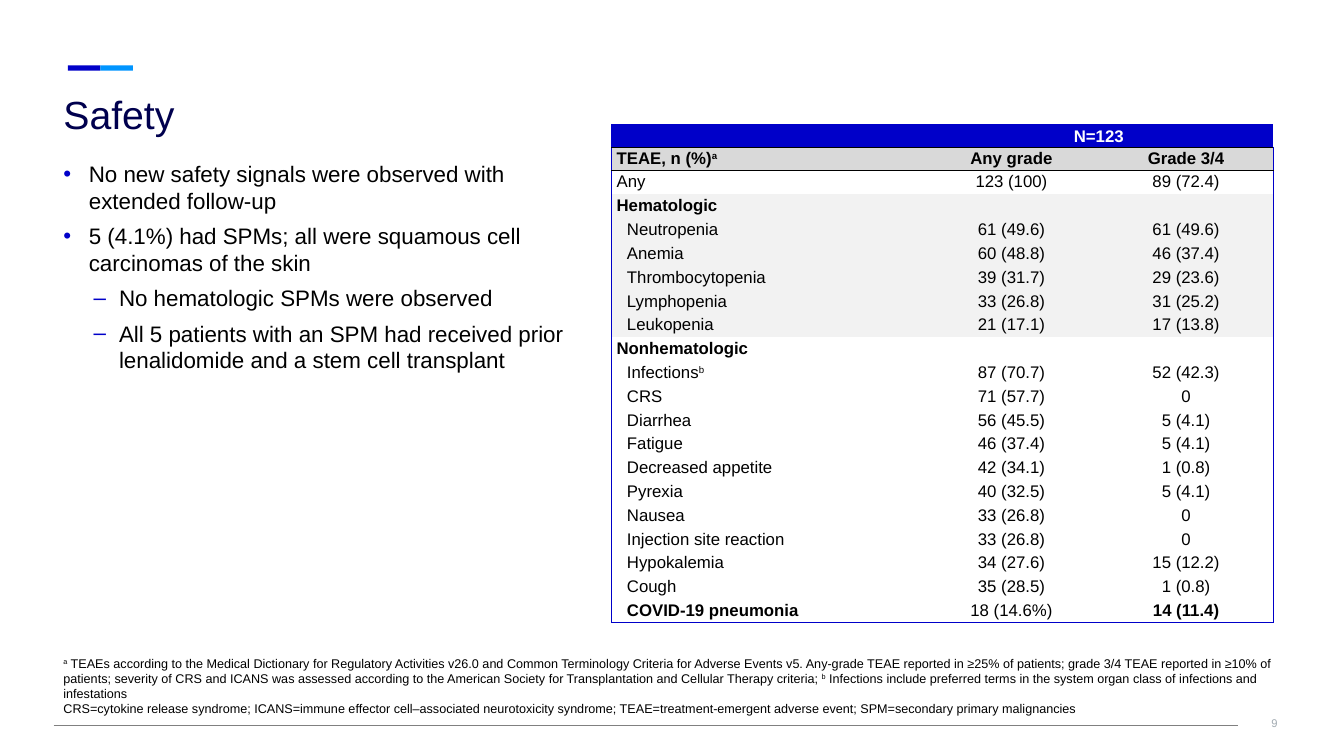
from lxml.etree import SubElement
from pptx import Presentation
from pptx.dml.color import RGBColor
from pptx.enum.shapes import MSO_CONNECTOR, MSO_SHAPE
from pptx.enum.text import MSO_ANCHOR, PP_ALIGN
from pptx.oxml.ns import qn
from pptx.util import Cm, Pt

# Content
TITLE = "Safety"
PAGE_NUMBER = "9"
BULLETS = [  # level, text
    (0, "No new safety signals were observed with extended follow-up"),
    (0, "5 (4.1%) had SPMs; all were squamous cell carcinomas of the skin"),
    (1, "No hematologic SPMs were observed"),
    (1, "All 5 patients with an SPM had received prior lenalidomide and a stem cell transplant"),
]
# Text between carets is superscript
FOOTNOTES = [
    "^a^ TEAEs according to the Medical Dictionary for Regulatory Activities v26.0 and Common "
    "Terminology Criteria for Adverse Events v5. Any-grade TEAE reported in ≥25% of patients; "
    "grade 3/4 TEAE reported in ≥10% of patients; severity of CRS and ICANS was assessed "
    "according to the American Society for Transplantation and Cellular Therapy criteria; "
    "^b^ Infections include preferred terms in the system organ class of infections and infestations",
    "CRS=cytokine release syndrome; ICANS=immune effector cell–associated neurotoxicity syndrome; "
    "TEAE=treatment-emergent adverse event; SPM=secondary primary malignancies",
]
EVENTS = [
    ("", "N=123", ""),
    ("TEAE, n (%)^a^", "Any grade", "Grade 3/4"),
    ("Any", "123 (100)", "89 (72.4)"),
    ("Hematologic", "", ""),
    ("Neutropenia", "61 (49.6)", "61 (49.6)"),
    ("Anemia", "60 (48.8)", "46 (37.4)"),
    ("Thrombocytopenia", "39 (31.7)", "29 (23.6)"),
    ("Lymphopenia", "33 (26.8)", "31 (25.2)"),
    ("Leukopenia", "21 (17.1)", "17 (13.8)"),
    ("Nonhematologic", "", ""),
    ("Infections^b^", "87 (70.7)", "52 (42.3)"),
    ("CRS", "71 (57.7)", "0"),
    ("Diarrhea", "56 (45.5)", "5 (4.1)"),
    ("Fatigue", "46 (37.4)", "5 (4.1)"),
    ("Decreased appetite", "42 (34.1)", "1 (0.8)"),
    ("Pyrexia", "40 (32.5)", "5 (4.1)"),
    ("Nausea", "33 (26.8)", "0"),
    ("Injection site reaction", "33 (26.8)", "0"),
    ("Hypokalemia", "34 (27.6)", "15 (12.2)"),
    ("Cough", "35 (28.5)", "1 (0.8)"),
    ("COVID-19 pneumonia", "18 (14.6%)", "14 (11.4)"),
]
HEADER_ROWS = 2
HEMATOLOGIC, NONHEMATOLOGIC = 3, 9
LAST_ROW, LAST_COLUMN = len(EVENTS) - 1, 2
BOLD_CELLS = {(HEMATOLOGIC, 0), (NONHEMATOLOGIC, 0), (LAST_ROW, 0), (LAST_ROW, 2)}

# Style
FONT = "Arial"
BLUE = RGBColor(0x00, 0x00, 0xC9)
SKY = RGBColor(0x00, 0x95, 0xFF)
NAVY = RGBColor(0x00, 0x00, 0x4E)
BLACK = RGBColor(0x00, 0x00, 0x00)
WHITE = RGBColor(0xFF, 0xFF, 0xFF)
HEADING_GRAY = RGBColor(0xD9, 0xD9, 0xD9)
BAND_GRAY = RGBColor(0xF2, 0xF2, 0xF2)
RULE_GRAY = RGBColor(0x80, 0x80, 0x80)
NUMBER_GRAY = RGBColor(0xA1, 0xAA, 0xB1)

# Layout in centimetres
LEFT = 1.35
COLUMN_WIDTHS = (7.87, 4.4, 4.4)
HEADER_HEIGHT, ROW_HEIGHT = 0.57, 0.6


def set_font(para, size, color, bold=False):
    font = para.font
    font.name, font.size, font.bold = FONT, Pt(size), bold
    font.color.rgb = color


def add_spans(para, text):
    for position, part in enumerate(text.split("^")):
        if part:
            span = para.add_run()
            span.text = part
            if position % 2:
                span._r.get_or_add_rPr().set("baseline", "30000")


def add_text_box(page, left, top, width, height, anchor=MSO_ANCHOR.TOP, inset=None):
    box = page.shapes.add_textbox(Cm(left), Cm(top), Cm(width), Cm(height))
    frame = box.text_frame
    frame.word_wrap = True
    frame.vertical_anchor = anchor
    if inset:
        frame.margin_left = frame.margin_right = Cm(inset)
        frame.margin_top = frame.margin_bottom = Cm(inset)
    return frame


def add_bullet(para, level):
    properties = para._p.get_or_add_pPr()
    properties.set("marL", str(Cm(1.4 if level else 0.64)))
    properties.set("indent", str(-Cm(0.64)))
    color = SubElement(properties, qn("a:buClr"))
    SubElement(color, qn("a:srgbClr"), val=str(BLUE))
    SubElement(properties, qn("a:buFont"), typeface=FONT)
    SubElement(properties, qn("a:buChar"), char="–" if level else "•")


def set_borders(cell, colors):
    """Colors in the order left, right, top, bottom; None hides the side."""
    properties = cell._tc.get_or_add_tcPr()
    for position, (side, color) in enumerate(zip("LRTB", colors)):
        line = SubElement(properties, qn(f"a:ln{side}"), w=str(Pt(1)))
        properties.insert(position, line)
        if color is None:
            SubElement(line, qn("a:noFill"))
        else:
            fill = SubElement(line, qn("a:solidFill"))
            SubElement(fill, qn("a:srgbClr"), val=str(color))


def row_fill(row):
    if row < HEADER_ROWS:
        return (BLUE, HEADING_GRAY)[row]
    return BAND_GRAY if HEMATOLOGIC <= row < NONHEMATOLOGIC else WHITE


def fill_cell(cell, row, column, text):
    cell.fill.solid()
    cell.fill.fore_color.rgb = row_fill(row)
    cell.vertical_anchor = MSO_ANCHOR.MIDDLE
    cell.margin_left = cell.margin_right = Cm(0.12)
    cell.margin_top = cell.margin_bottom = Cm(0.03)
    para = cell.text_frame.paragraphs[0]
    para.alignment = PP_ALIGN.CENTER if column else PP_ALIGN.LEFT
    if column == 0 and row > HEMATOLOGIC and row != NONHEMATOLOGIC:
        para._p.get_or_add_pPr().set("marL", str(Cm(0.26)))
    bold = row < HEADER_ROWS or (row, column) in BOLD_CELLS
    set_font(para, 12, BLACK if row else WHITE, bold)
    add_spans(para, text)
    if not text:
        SubElement(para._p, qn("a:endParaRPr"), sz="1200")
    set_borders(cell, (
        BLUE if column == 0 else None,
        BLUE if column == LAST_COLUMN else None,
        BLUE if row == 0 else BLACK if row <= HEADER_ROWS else None,
        BLUE if row == LAST_ROW else BLACK if row < HEADER_ROWS else None,
    ))


def add_event_table(page):
    height = HEADER_HEIGHT * HEADER_ROWS + ROW_HEIGHT * (len(EVENTS) - HEADER_ROWS)
    table = page.shapes.add_table(len(EVENTS), len(COLUMN_WIDTHS), Cm(15.42), Cm(3.15),
                                  Cm(sum(COLUMN_WIDTHS)), Cm(height)).table
    table.first_row = table.horz_banding = False
    for column, width in enumerate(COLUMN_WIDTHS):
        table.columns[column].width = Cm(width)
    for row, texts in enumerate(EVENTS):
        table.rows[row].height = Cm(HEADER_HEIGHT if row < HEADER_ROWS else ROW_HEIGHT)
        for column, text in enumerate(texts):
            fill_cell(table.cell(row, column), row, column, text)
    table.cell(0, 1).merge(table.cell(0, 2))


def main():
    deck = Presentation()
    deck.slide_width, deck.slide_height = Cm(33.87), Cm(19.05)
    page = deck.slides.add_slide(deck.slide_layouts[6])

    # Accent bars
    for position, color in enumerate((BLUE, SKY)):
        bar = page.shapes.add_shape(MSO_SHAPE.RECTANGLE, Cm(1.71 + 0.82 * position), Cm(1.65),
                                    Cm(0.82), Cm(0.13))
        bar.shadow.inherit = False
        bar.fill.solid()
        bar.fill.fore_color.rgb = color
        bar.line.fill.background()

    # Page number and footer rule
    para = add_text_box(page, 30.5, 17.5, 2.03, 1.45, MSO_ANCHOR.MIDDLE, 0.33).paragraphs[0]
    para.alignment = PP_ALIGN.RIGHT
    set_font(para, 8, NUMBER_GRAY)
    add_spans(para, PAGE_NUMBER)
    rule = page.shapes.add_connector(MSO_CONNECTOR.STRAIGHT, Cm(LEFT), Cm(18.27),
                                     Cm(31.19), Cm(18.27))
    rule.line.color.rgb = RULE_GRAY
    rule.line.width = Pt(0.5)
    SubElement(rule._element.spPr, qn("a:effectLst"))

    # Title
    para = add_text_box(page, LEFT, 2.03, 31.7, 1.7, inset=0.25).paragraphs[0]
    set_font(para, 28, NAVY)
    add_spans(para, TITLE)

    # Key points
    frame = add_text_box(page, LEFT, 3.91, 14.07, 5.8)
    for position, (level, text) in enumerate(BULLETS):
        para = frame.add_paragraph() if position else frame.paragraphs[0]
        para.level = level
        para.space_before = Pt(6)
        add_bullet(para, level)
        set_font(para, 16, BLACK)
        add_spans(para, text)

    # Footnotes
    para = add_text_box(page, LEFT, 16.38, 31.17, 1.8, MSO_ANCHOR.BOTTOM).paragraphs[0]
    set_font(para, 9, BLACK)
    for position, text in enumerate(FOOTNOTES):
        if position:
            para.add_line_break()
        add_spans(para, text)

    add_event_table(page)
    deck.save("out.pptx")


if __name__ == "__main__":
    main()
